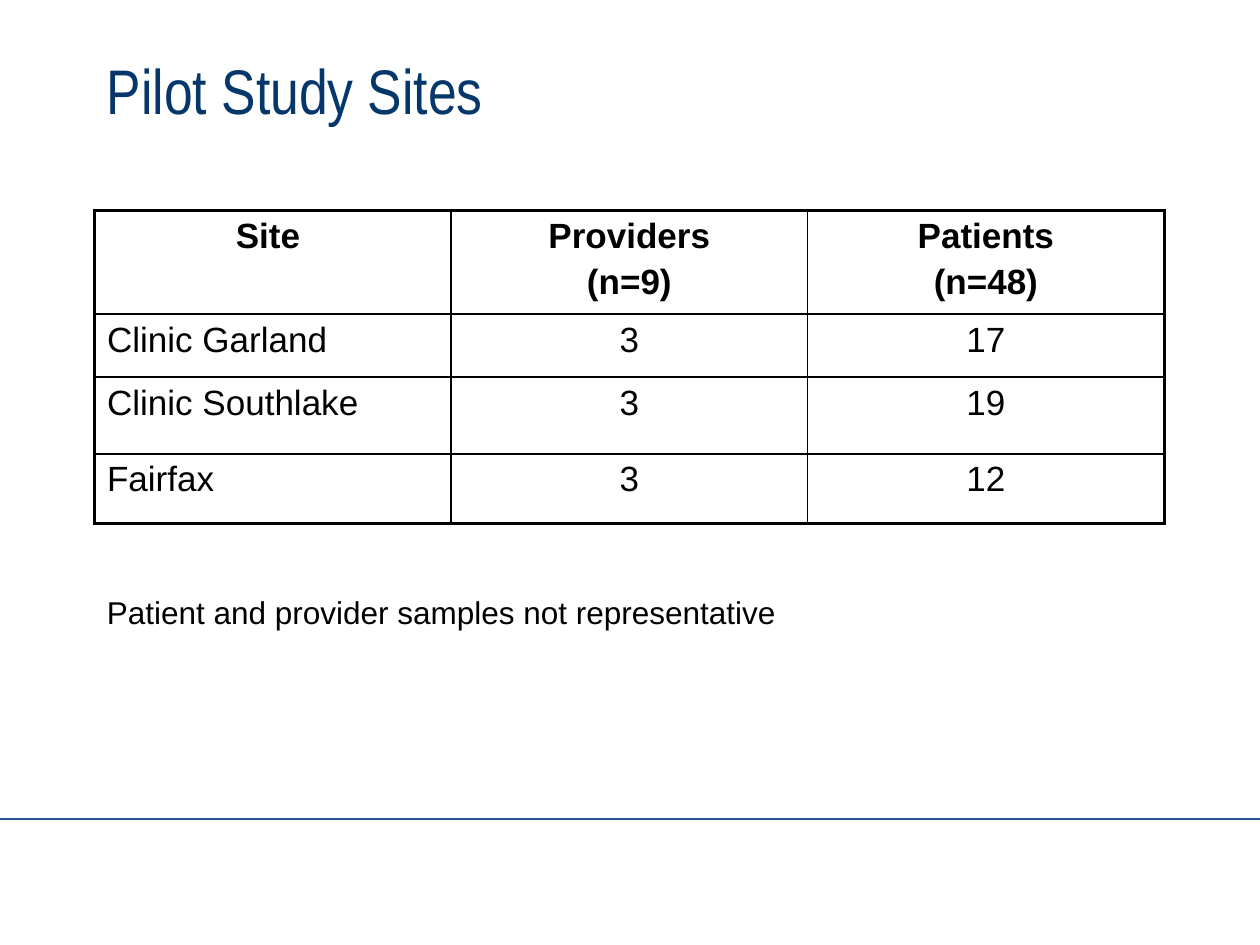
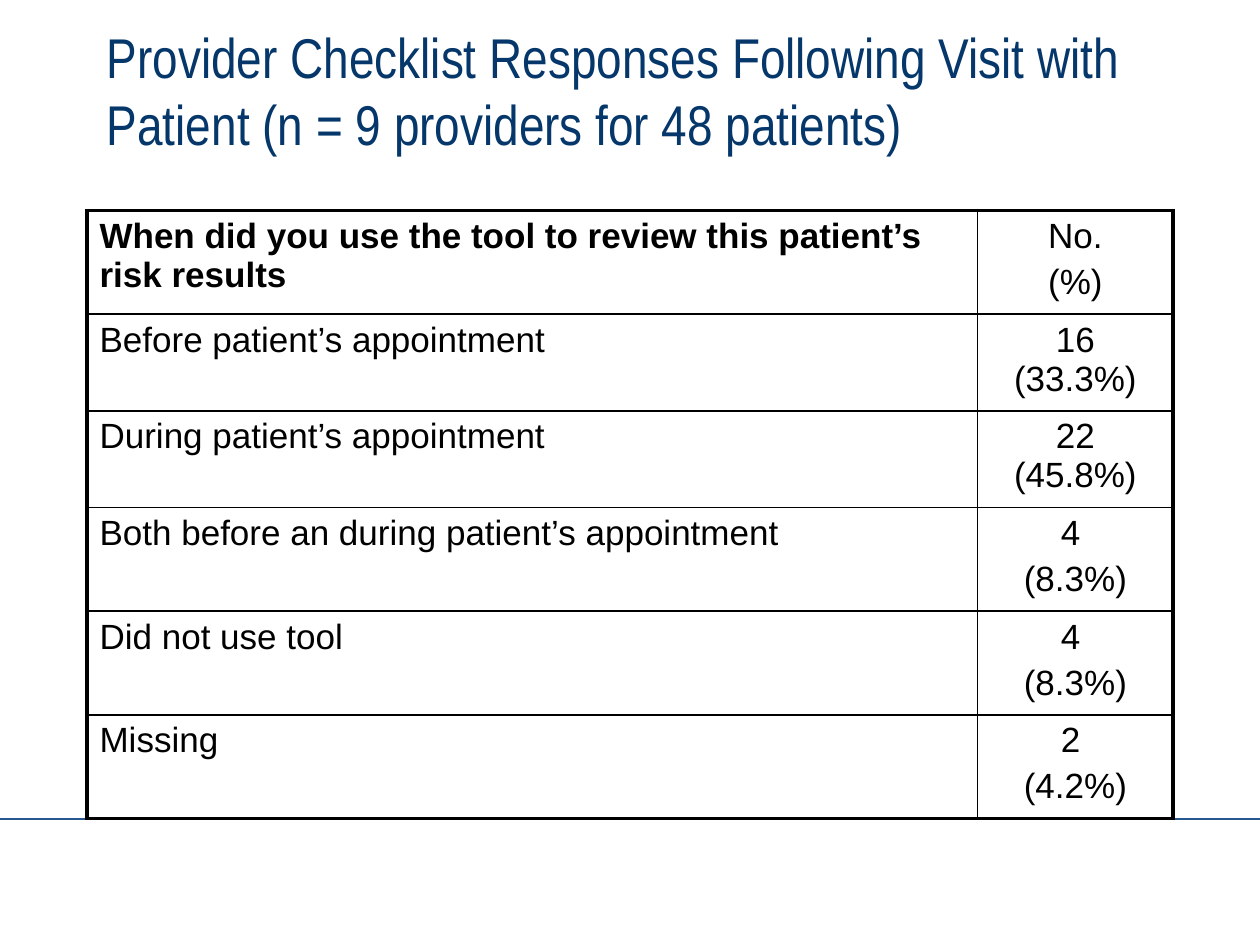
import dataclasses

import lxml.etree
import pptx
import pptx.dml.color
import pptx.enum.shapes
import pptx.enum.text
import pptx.oxml
import pptx.oxml.ns
import pptx.util

Inches = pptx.util.Inches
Pt = pptx.util.Pt
RGB = pptx.dml.color.RGBColor
ALIGN = pptx.enum.text.PP_ALIGN
qn = pptx.oxml.ns.qn


@dataclasses.dataclass(frozen=True)
class Theme:
    """Colours, fonts, type sizes and line widths shared by the slides."""
    title_color: str = "05376A"
    rule_color: str = "28578F"
    ink: str = "000000"
    title_font: str = "Arial Narrow"
    body_font: str = "Arial"
    title_size: int = 36
    long_title_size: int = 32
    table_size: int = 20
    note_size: int = 18
    rule_width: float = 1.5
    outer_border: float = 2.25
    inner_border: float = 1


THEME = Theme()


def text_format(name, size, color, bold=False):
    """Return the font attributes for a piece of text."""
    return {"name": name, "size": Pt(size), "bold": bold,
            "color": RGB.from_string(color)}


def write(p, text, fmt):
    """Add a run to a paragraph and format it."""
    r = p.add_run()
    r.text = text
    for key, value in fmt.items():
        if key == "color":
            r.font.color.rgb = value
        else:
            setattr(r.font, key, value)


def add_text(s, text, box, fmt, anchor=pptx.enum.text.MSO_ANCHOR.TOP):
    """Add a wrapped text box."""
    tf = s.shapes.add_textbox(*map(Inches, box)).text_frame
    tf.word_wrap = True
    tf.vertical_anchor = anchor
    write(tf.paragraphs[0], text, fmt)


def add_base_slide(prs, title, size):
    """Add a blank slide with the footer rule and a title."""
    s = prs.slides.add_slide(prs.slide_layouts[6])
    rule = s.shapes.add_connector(
        pptx.enum.shapes.MSO_CONNECTOR.STRAIGHT,
        0, Inches(6.5), prs.slide_width, Inches(6.5))
    rule.line.color.rgb = RGB.from_string(THEME.rule_color)
    rule.line.width = Pt(THEME.rule_width)
    lxml.etree.SubElement(rule._element.spPr, qn("a:effectLst"))
    add_text(s, title, (0.75, 0.25, 8.5, 0.92),
             text_format(THEME.title_font, size, THEME.title_color),
             pptx.enum.text.MSO_ANCHOR.MIDDLE)
    return s


def set_borders(cell, outer):
    """Draw the cell's sides, heavier where they lie on the table's edge."""
    tcPr = cell._tc.get_or_add_tcPr()
    for i, (side, is_outer) in enumerate(outer.items()):
        width = THEME.outer_border if is_outer else THEME.inner_border
        tcPr.insert(i, pptx.oxml.parse_xml(
            f'<a:ln{side} {pptx.oxml.ns.nsdecls("a")} w="{Pt(width)}">'
            f'<a:solidFill><a:srgbClr val="{THEME.ink}"/></a:solidFill>'
            f'</a:ln{side}>'))


def fill_cell(cell, text, align, bold):
    """Write one paragraph per line of text in an unfilled cell."""
    cell.fill.background()
    fmt = text_format(THEME.body_font, THEME.table_size, THEME.ink, bold)
    tf = cell.text_frame
    for i, line in enumerate(text.split("\n")):
        p = tf.add_paragraph() if i else tf.paragraphs[0]
        p.alignment = align
        if i:
            p.space_before = Pt(THEME.table_size * 0.2)
        write(p, line, fmt)


def add_grid(s, left, widths, heights, rows, header_aligns, bold_headers):
    """Add a ruled table with left labels and centred values."""
    box = (left, 1.67, sum(widths), sum(heights))
    table = s.shapes.add_table(len(rows), len(widths),
                               *map(Inches, box)).table
    table.first_row = table.horz_banding = False
    for col, width in zip(table.columns, widths):
        col.width = Inches(width)
    for row, height in zip(table.rows, heights):
        row.height = Inches(height)
    body_aligns = [ALIGN.LEFT] + [ALIGN.CENTER] * (len(widths) - 1)
    for y, values in enumerate(rows):
        aligns = body_aligns if y else header_aligns
        for x, text in enumerate(values):
            cell = table.cell(y, x)
            fill_cell(cell, text, aligns[x], y == 0 and x < bold_headers)
            set_borders(cell, {"L": x == 0, "R": x == len(widths) - 1,
                               "T": y == 0, "B": y == len(rows) - 1})


def add_sites_slide(prs):
    """Add the slide on the study sites."""
    s = add_base_slide(prs, "Pilot Study Sites", THEME.title_size)
    rows = [("Site ", "Providers\n(n=9)", "Patients\n(n=48)"),
            ("Clinic Garland", "3", "17"),
            ("Clinic Southlake", "3", "19"),
            ("Fairfax", "3", "12")]
    add_grid(s, 0.75, [2.83] * 3, [0.77, 0.5, 0.61, 0.55], rows,
             [ALIGN.CENTER] * 3, 3)
    add_text(s, "Patient and provider samples not representative",
             (0.75, 4.66, 8.63, 0.4),
             text_format(THEME.body_font, THEME.note_size, THEME.ink))


def add_responses_slide(prs):
    """Add the slide on the provider checklist responses."""
    s = add_base_slide(
        prs, "Provider Checklist Responses Following Visit with Patient "
        "(n = 9 providers for 48 patients)", THEME.long_title_size)
    rows = [("When did you use the tool to review this patient’s "
             "risk results", "No.\n(%)"),
            ("Before patient’s appointment", "16 (33.3%)"),
            ("During patient’s appointment", "22 (45.8%)"),
            ("Both before an during patient’s appointment", "4 \n(8.3%)"),
            ("Did not use tool", "4 \n(8.3%)"),
            ("Missing", "2 \n(4.2%)")]
    add_grid(s, 0.69, [7.07, 1.55], [0.77, 0.72, 0.72] + [0.77] * 3, rows,
             [ALIGN.LEFT, ALIGN.CENTER], 1)


def main():
    """Build and save the presentation."""
    prs = pptx.Presentation()
    prs.slide_width, prs.slide_height = Inches(10), Inches(7.5)
    add_sites_slide(prs)
    add_responses_slide(prs)
    prs.save("out.pptx")


if __name__ == "__main__":
    main()
